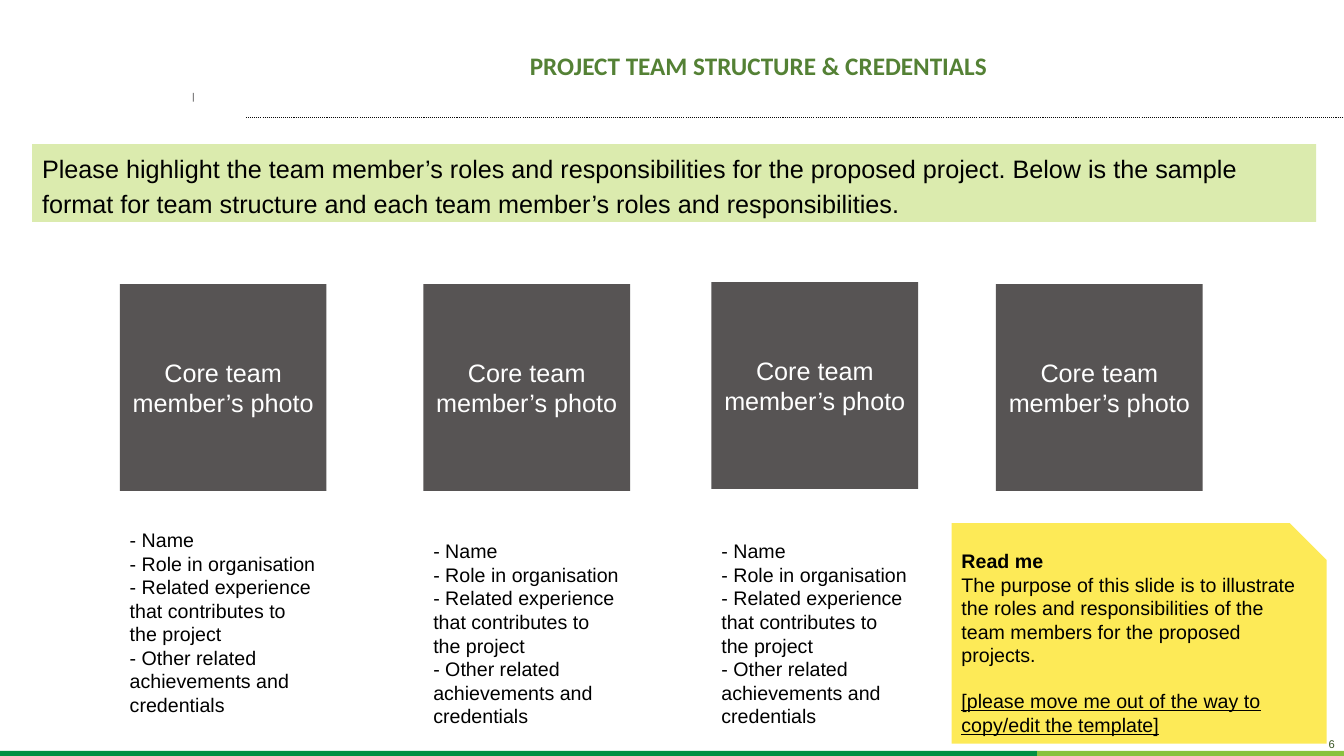
from dataclasses import dataclass

from pptx import Presentation
from pptx.dml.color import RGBColor
from pptx.enum.dml import MSO_LINE
from pptx.enum.shapes import MSO_CONNECTOR, MSO_SHAPE
from pptx.enum.text import MSO_ANCHOR, PP_ALIGN
from pptx.oxml.ns import qn
from pptx.util import Cm, Pt

RECT, SNIPPED = MSO_SHAPE.RECTANGLE, MSO_SHAPE.SNIP_1_RECTANGLE
STRAIGHT, DOTTED = MSO_CONNECTOR.STRAIGHT, MSO_LINE.ROUND_DOT
LEFT, CENTER, RIGHT = PP_ALIGN.LEFT, PP_ALIGN.CENTER, PP_ALIGN.RIGHT
TOP, MIDDLE = MSO_ANCHOR.TOP, MSO_ANCHOR.MIDDLE
WIDTH, HEIGHT = 33.87, 19.05
INSETS = (0.25, 0.13, 0.25, 0.13)


@dataclass(frozen=True)
class Theme:
    body_font: str = "Arial"
    title_font: str = "Calibri"
    large: int = 18
    small: int = 14
    tiny: int = 8
    black: str = "000000"
    white: str = "FFFFFF"
    title: str = "548135"
    number: str = "385623"
    rule: str = "0C0C0C"
    tick: str = "414042"
    bar_dark: str = "009044"
    bar_light: str = "88C23E"
    banner: str = "DBEBAE"
    photo: str = "575454"
    note: str = "FDEA57"


class SlideBuilder:
    def __init__(self, slide, theme):
        self.shapes = slide.shapes
        self.theme = theme

    def block(self, box, color, kind=RECT):
        shape = self.shapes.add_shape(kind, *map(Cm, box))
        shape.shadow.inherit = False
        shape.fill.solid()
        shape.fill.fore_color.rgb = RGBColor.from_string(color)
        shape.line.fill.background()
        return shape

    def label(self, box, lines, **style):
        textbox = self.shapes.add_textbox(*map(Cm, box))
        self.fill_text(textbox, lines, **style)

    def rule(self, left, right, y):
        line = self.shapes.add_connector(STRAIGHT, Cm(left), Cm(y), Cm(right), Cm(y))
        line.line.color.rgb = RGBColor.from_string(self.theme.rule)
        line.line.width = Pt(0.75)
        line.line.dash_style = DOTTED
        properties = line._element.spPr
        properties.append(properties.makeelement(qn("a:effectLst"), {}))

    def fill_text(self, shape, lines, size, color=None, font=None, align=LEFT,
                  anchor=TOP, insets=INSETS, spacing=1.0, formats=None):
        """Fill a shape with paragraphs; formats maps a line index to its overrides."""
        frame = shape.text_frame
        frame.word_wrap = True
        frame.vertical_anchor = anchor
        for side, inset in zip(("left", "top", "right", "bottom"), insets):
            setattr(frame, f"margin_{side}", Cm(inset))
        for index, line in enumerate(lines):
            paragraph = frame.add_paragraph() if index else frame.paragraphs[0]
            paragraph.text = line
            values = {"name": font or self.theme.body_font, "size": Pt(size)}
            values.update((formats or {}).get(index, {}))
            layout = {"alignment": align, "line_spacing": spacing,
                      "space_before": Pt(values.pop("gap", 0))}
            for target, settings in ((paragraph, layout), (paragraph.runs[0].font, values)):
                for name, value in settings.items():
                    setattr(target, name, value)
            paragraph.runs[0].font.color.rgb = RGBColor.from_string(color or self.theme.black)


def add_frame(builder, theme):
    """Draw the footer bars, header rule, page number and title."""
    bar_split, bar_height = 26.14, 0.13
    bar_top = HEIGHT - bar_height
    builder.block((0, bar_top, bar_split, bar_height), theme.bar_dark)
    builder.block((bar_split, bar_top, WIDTH - bar_split, bar_height), theme.bar_light)
    builder.block((4.86, 2.34, 0.02, 0.22), theme.tick)
    builder.rule(6.2, WIDTH, 2.95)
    builder.label((26.37, 18.52, 7.52, 0.46), ["6"], size=theme.tiny,
                  color=theme.number, align=RIGHT, anchor=MIDDLE)
    builder.label((6.63, 1.24, 23.7, 0.81), ["PROJECT TEAM STRUCTURE & CREDENTIALS"],
                  size=theme.large, color=theme.title, font=theme.title_font,
                  align=CENTER, anchor=MIDDLE, insets=(1.27, 0.03, 0, 0),
                  formats={0: {"bold": True}})


def add_team(builder, theme):
    photo_side = 5.21
    role_lines = [
        "- Name",
        "- Role in organisation",
        "- Related experience that contributes to the project",
        "- Other related achievements and credentials",
    ]
    # Left edge, photo top and roles top; the note takes the last roles place
    members = [(3.02, 7.16, 13.18), (10.67, 7.16, 13.46),
               (17.93, 7.11, 13.46), (25.1, 7.16, None)]
    for left, photo_top, roles_top in members:
        photo = builder.block((left, photo_top, photo_side, photo_side), theme.photo)
        builder.fill_text(photo, ["Core team member’s photo"], size=theme.large,
                          color=theme.white, align=CENTER, anchor=MIDDLE)
        if roles_top:
            builder.label((left, roles_top, photo_side, 5.05), role_lines, size=theme.small)


def add_note(builder, theme):
    note = builder.block((23.98, 13.18, 9.45, 5.56), theme.note, SNIPPED)
    note.adjustments[0] = 0.167
    builder.fill_text(
        note,
        ["Read me",
         "The purpose of this slide is to illustrate the roles and responsibilities "
         "of the team members for the proposed projects.",
         "[please move me out of the way to copy/edit the template]"],
        size=theme.small, anchor=MIDDLE, insets=(0.25,) * 4,
        formats={0: {"bold": True}, 2: {"underline": True, "gap": 16}})


def main():
    theme = Theme()
    presentation = Presentation()
    presentation.slide_width, presentation.slide_height = Cm(WIDTH), Cm(HEIGHT)
    slide = presentation.slides.add_slide(presentation.slide_layouts[6])
    builder = SlideBuilder(slide, theme)
    add_frame(builder, theme)
    banner = builder.block((0.81, 3.63, 32.36, 1.96), theme.banner)
    builder.fill_text(
        banner,
        ["Please highlight the team member’s roles and responsibilities for the "
         "proposed project. Below is the sample format for team structure and each "
         "team member’s roles and responsibilities."],
        size=theme.large, spacing=1.15)
    add_team(builder, theme)
    add_note(builder, theme)
    presentation.save("out.pptx")


if __name__ == "__main__":
    main()
